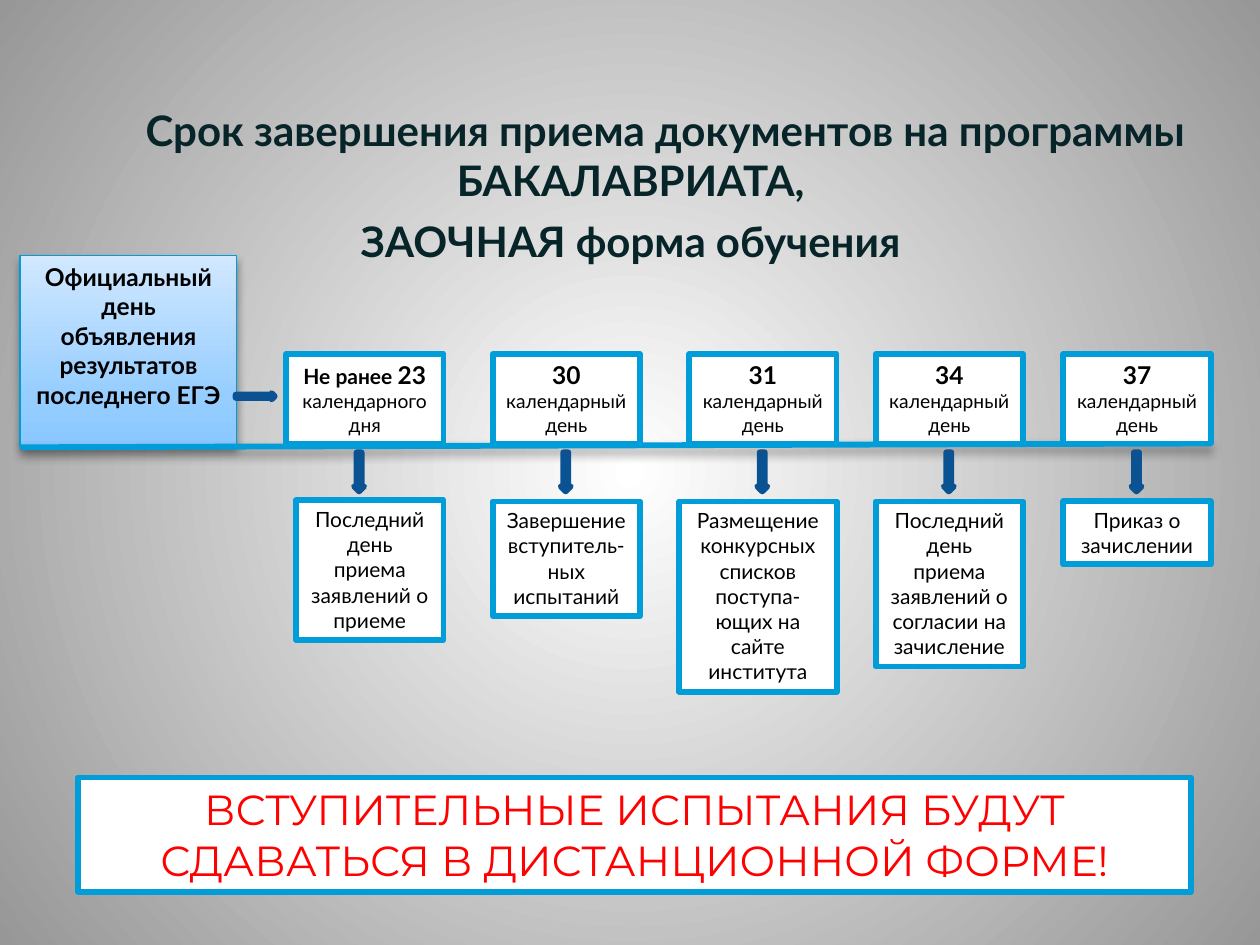
from pptx import Presentation
from pptx.dml.color import RGBColor
from pptx.enum.shapes import MSO_CONNECTOR, MSO_SHAPE as Shape
from pptx.enum.text import MSO_ANCHOR, MSO_AUTO_SIZE, PP_ALIGN
from pptx.oxml import parse_xml
from pptx.oxml.ns import nsdecls, qn
from pptx.util import Inches, Pt

WHITE = RGBColor(0xFF, 0xFF, 0xFF)
BLACK = RGBColor(0, 0, 0)
GRAY = RGBColor(0x97, 0x97, 0x97)
RED = RGBColor(0xFF, 0, 0)
DARK_TEAL = RGBColor(0x07, 0x24, 0x28)
CYAN = RGBColor(0x00, 0x9D, 0xD9)
BLUE = RGBColor(0x0F, 0x6F, 0xC6)
DARK_BLUE = RGBColor(0x0B, 0x52, 0x92)
SKY_STOPS = [(0, RGBColor(0x8A, 0xC8, 0xFF)), (25, RGBColor(0x95, 0xCD, 0xFF)),
             (100, RGBColor(0xD1, 0xE8, 0xFF))]
RADIAL = ('<a:path path="circle"><a:fillToRect l="50000" t="50000" '
          'r="50000" b="50000"/></a:path>')
UPWARD = '<a:lin ang="16200000" scaled="0"/>'
LINE_WIDTH = 3.35

STAGES = [
    (3.52, 1.25, 1.17, 3.97, 1.11, "Не ранее ", "23", "календарного дня",
     "Последний день приема заявлений о приеме"),
    (5.08, 1.17, 1.17, 3.98, 0.91, "", "30", "календарный день",
     "Завершение вступитель-ных испытаний"),
    (6.64, 1.17, 1.25, 3.98, 1.51, "", "31", "календарный день",
     "Размещение конкурсных списков поступа-ющих на сайте института"),
    (8.12, 1.17, 1.17, 3.98, 1.31, "", "34", "календарный день",
     "Последний день приема заявлений о согласии на зачисление"),
    (9.61, 1.17, 1.17, 3.98, 0.5, "", "37", "календарный день",
     "Приказ о зачислении"),
]


def set_gradient(fill, element, stops, direction):
    fill.solid()
    solid = next(element.iter(qn("a:solidFill")))
    marks = "".join(f'<a:gs pos="{position * 1000}"><a:srgbClr val="{color}"/></a:gs>'
                    for position, color in stops)
    gradient = parse_xml(f'<a:gradFill {nsdecls("a")} rotWithShape="1">'
                         f'<a:gsLst>{marks}</a:gsLst>{direction}</a:gradFill>')
    solid.getparent().replace(solid, gradient)


def add_effects(shape, shadow=False):
    inner = ('<a:outerShdw blurRad="66040" dist="38100" dir="5400000" rotWithShape="0">'
             '<a:srgbClr val="000000"><a:alpha val="40000"/></a:srgbClr></a:outerShdw>')
    shape.element.spPr.append(parse_xml(
        f'<a:effectLst {nsdecls("a")}>{inner if shadow else ""}</a:effectLst>'))


def add_text(para, text, size=12, color=BLACK, bold=False, font="Lato"):
    para.alignment = PP_ALIGN.CENTER
    span = para.add_run()
    span.text = text
    span.font.name = font
    span.font.size = Pt(size)
    span.font.bold = bold
    span.font.color.rgb = color


def prepare_frame(shape):
    frame = shape.text_frame
    frame.word_wrap = True
    frame.auto_size = MSO_AUTO_SIZE.SHAPE_TO_FIT_TEXT
    frame.vertical_anchor = MSO_ANCHOR.TOP
    return frame


def add_box(page, left, top, width, height, kind=Shape.RECTANGLE, fill=WHITE,
            line=CYAN, line_width=LINE_WIDTH, shadow=False):
    box = page.shapes.add_shape(kind, Inches(left), Inches(top),
                                Inches(width), Inches(height))
    if isinstance(fill, list):
        set_gradient(box.fill, box.element.spPr, fill, UPWARD)
    else:
        box.fill.solid()
        box.fill.fore_color.rgb = fill
    box.line.color.rgb = line
    box.line.width = Pt(line_width)
    add_effects(box, shadow)
    return box


def add_arrow(page, left, top, width, height, kind):
    add_box(page, left, top, width, height, kind=kind, fill=BLUE, line=DARK_BLUE)


def place_title(page, left, top, width, height):
    title = page.shapes.title
    title.left, title.top = Inches(left), Inches(top)
    title.width, title.height = Inches(width), Inches(height)
    frame = prepare_frame(title)
    first, second = frame.paragraphs[0], frame.add_paragraph()
    first.font.size = Pt(24)
    first._p.get_or_add_pPr().set("indent", str(Inches(0.55)))
    add_text(first, "Срок завершения приема документов на программы БАКАЛАВРИАТА,",
             size=24, color=DARK_TEAL, bold=True)
    add_text(second, "ЗАОЧНАЯ форма обучения", size=24, color=DARK_TEAL, bold=True)
    for para in (first, second):
        para.space_after = Pt(6)


def place_start(page, left, top, width, height):
    box = add_box(page, left, top, width, height, fill=SKY_STOPS,
                  line_width=0.75, shadow=True)
    add_text(prepare_frame(box).paragraphs[0],
             "Официальный день объявления результатов последнего ЕГЭ",
             size=14, bold=True)


def place_timeline(page, left, start_y, right, end_y):
    axis = page.shapes.add_connector(MSO_CONNECTOR.STRAIGHT, Inches(left), Inches(start_y),
                                     Inches(right), Inches(end_y))
    axis.line.color.rgb = CYAN
    axis.line.width = Pt(LINE_WIDTH)
    add_effects(axis, shadow=True)


def place_stage(page, right, date_width, event_width, event_top, event_height,
                prefix, number, unit, event):
    left = right - date_width
    frame = prepare_frame(add_box(page, left, 2.81, date_width, 0.71))
    heading = frame.paragraphs[0]
    if prefix:
        add_text(heading, prefix, bold=True)
    add_text(heading, number, size=14, bold=True)
    add_text(frame.add_paragraph(), unit, size=11)
    event_box = add_box(page, right - event_width, event_top, event_width, event_height)
    add_text(prepare_frame(event_box).paragraphs[0], event)
    add_arrow(page, left + 0.54, 3.59, 0.08, 0.31, Shape.DOWN_ARROW)


def place_notice(page, left, top, width, height):
    box = add_box(page, left, top, width, height)
    add_text(prepare_frame(box).paragraphs[0],
             "ВСТУПИТЕЛЬНЫЕ ИСПЫТАНИЯ БУДУТ СДАВАТЬСЯ В ДИСТАНЦИОННОЙ ФОРМЕ!",
             size=24, color=RED, font="Montserrat")


def main():
    deck = Presentation()
    deck.slide_width, deck.slide_height = Inches(10), Inches(7.5)
    page = deck.slides.add_slide(deck.slide_layouts[5])
    set_gradient(page.background.fill, page.element, [(0, WHITE), (100, GRAY)], RADIAL)
    place_title(page, 0.16, 0.78, 9.69, 1.82)
    place_notice(page, 0.62, 6.17, 8.83, 0.91)
    place_start(page, 0.16, 2.03, 1.72, 1.51)
    place_timeline(page, 0.16, 3.55, 9.61, 3.52)
    add_arrow(page, 1.87, 3.12, 0.31, 0.05, Shape.RIGHT_ARROW)
    for stage in STAGES:
        place_stage(page, *stage)
    deck.save("out.pptx")


if __name__ == "__main__":
    main()
